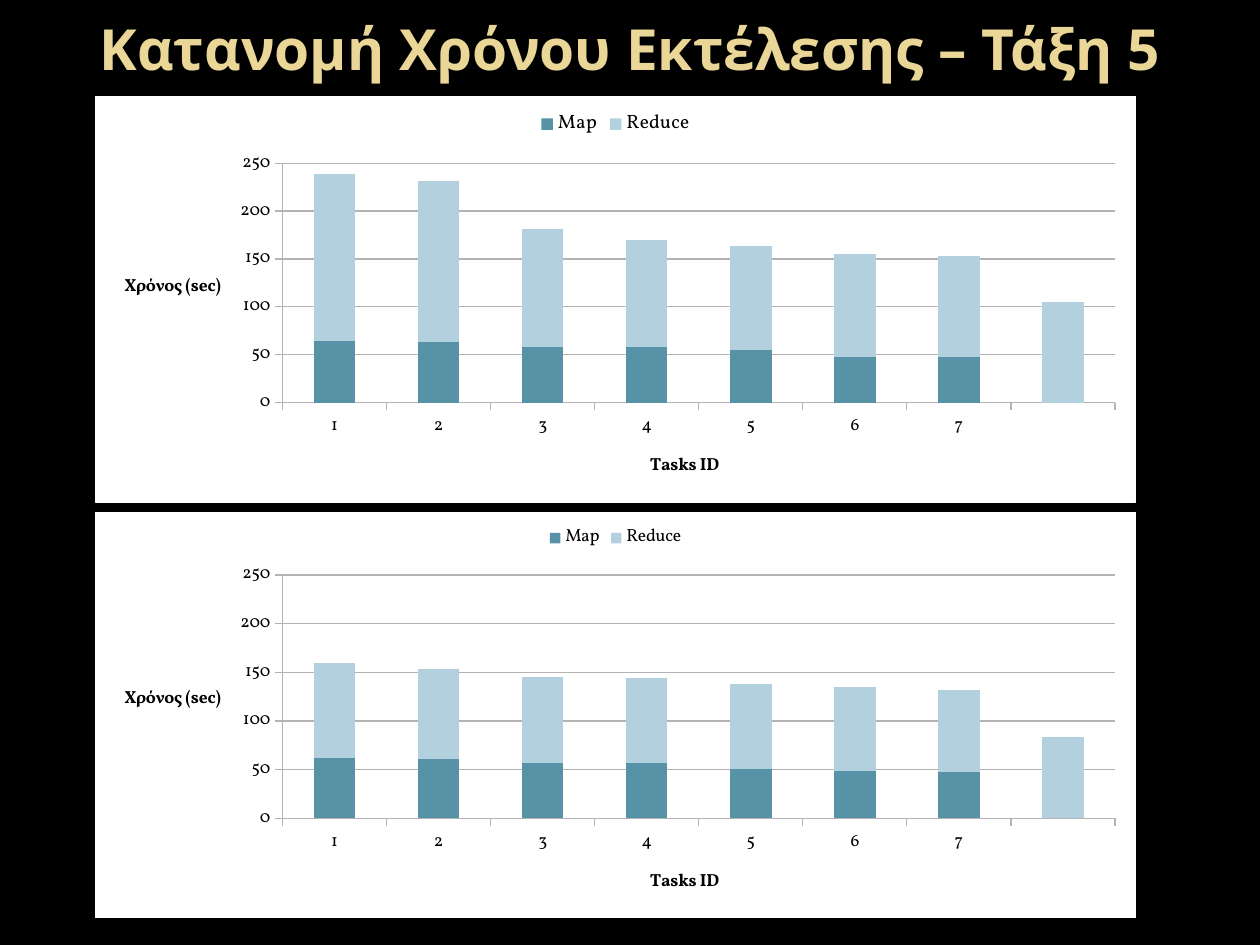
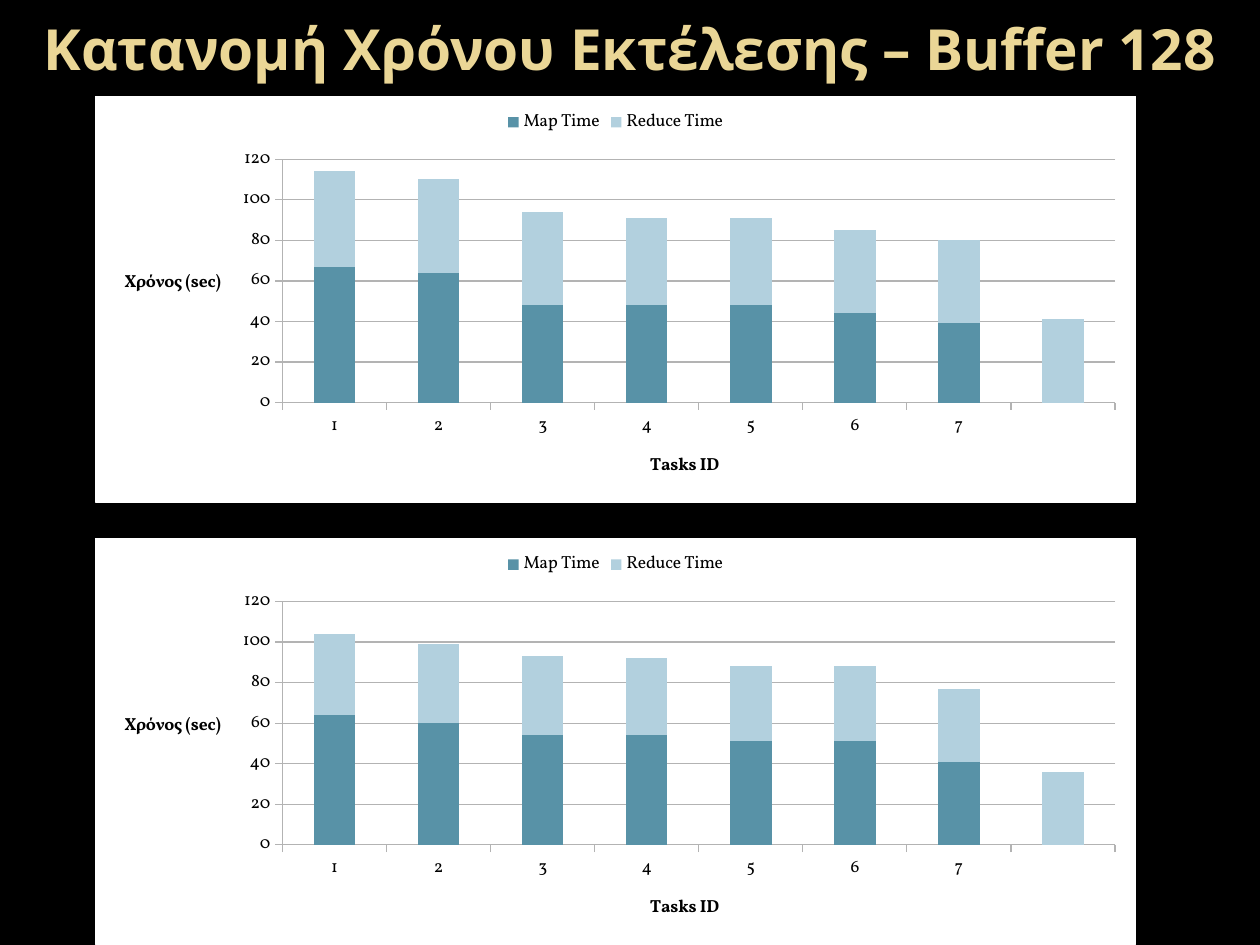
import pptx
import pptx.util
import pptx.dml.color
import pptx.chart.data
import pptx.enum.chart
import pptx.enum.text
import pptx.oxml
import pptx.oxml.ns

Inches, Pt = pptx.util.Inches, pptx.util.Pt
qn = pptx.oxml.ns.qn

BLACK, WHITE, GOLD, GRID = "000000", "FFFFFF", "EAD696", "B3B3B3"
SERIES_COLORS = ["5892A7", "B2D0DE"]
TITLE_HEIGHT = 0.76
CHART_LEFT, CHART_WIDTH, CHART_HEIGHT = 0.75, 8.27, 3.23
TASKS = ["1", "2", "3", "4", "5", "6", "7", ""]

# Each chart: top, legend size, plot top and height as shares, map and reduce times
SLIDES = [
    {"title": "Κατανομή Χρόνου Εκτέλεσης – Τάξη 5", "margin": 0.5,
     "names": ["Map", "Reduce"], "maximum": 250, "step": 50, "plot_left": 0.18,
     "charts": [
         (0.76, 11, 0.165, 0.59, [64, 63, 58, 58, 55, 48, 48, None],
          [175, 168, 123, 112, 109, 107, 105, 105]),
         (4.06, 10, 0.155, 0.6, [62, 61, 57, 57, 51, 49, 48, None],
          [98, 92, 88, 87, 87, 86, 84, 84])]},
    {"title": "Κατανομή Χρόνου Εκτέλεσης – Buffer 128", "margin": 0,
     "names": ["Map Time", "Reduce Time"], "maximum": 120, "step": 20, "plot_left": 0.18,
     "charts": [
         (0.76, 10, 0.155, 0.6, [67, 64, 48, 48, 48, 44, 39, None],
          [47, 46, 46, 43, 43, 41, 41, 41]),
         (4.27, 10, 0.155, 0.6, [64, 60, 54, 54, 51, 51, 41, None],
          [40, 39, 39, 38, 37, 37, 36, 36])]},
]


def color(value):
    return pptx.dml.color.RGBColor.from_string(value)


def place(element, index, inner=False, **shares):
    """Fix the place of a chart part, in shares of the chart's size."""
    for old in element.findall(qn("c:layout")):
        element.remove(old)
    target = '<c:layoutTarget val="inner"/>' if inner else ""
    modes = "".join(f'<c:{key}Mode val="edge"/>' for key in "xy")
    values = "".join(f'<c:{key} val="{share}"/>' for key, share in shares.items())
    element.insert(index, pptx.oxml.parse_xml(
        f'<c:layout {pptx.oxml.ns.nsdecls("c")}><c:manualLayout>'
        f'{target}{modes}{values}</c:manualLayout></c:layout>'))


presentation = pptx.Presentation()
presentation.slide_width, presentation.slide_height = Inches(10), Inches(7.5)

# Shared black background
background = presentation.slide_master.background.fill
background.solid()
background.fore_color.rgb = color(BLACK)

for content in SLIDES:
    slide = presentation.slides.add_slide(presentation.slide_layouts[6])

    # Title
    margin = content["margin"]
    title = slide.shapes.add_textbox(
        Inches(margin), 0, Inches(10 - 2 * margin), Inches(TITLE_HEIGHT))
    title.text_frame.word_wrap = True
    title.text_frame.vertical_anchor = pptx.enum.text.MSO_ANCHOR.MIDDLE
    paragraph = title.text_frame.paragraphs[0]
    paragraph.alignment = pptx.enum.text.PP_ALIGN.CENTER
    run = paragraph.add_run()
    run.text = content["title"]
    run.font.name, run.font.size, run.font.bold = "Open Sans", Pt(32.4), True
    run.font.color.rgb = color(GOLD)

    for top, legend_size, plot_top, plot_height, *times in content["charts"]:
        # Stacked columns
        data = pptx.chart.data.CategoryChartData()
        data.categories = TASKS
        for name, values in zip(content["names"], times):
            data.add_series(name, values)
        chart = slide.shapes.add_chart(
            pptx.enum.chart.XL_CHART_TYPE.COLUMN_STACKED, Inches(CHART_LEFT),
            Inches(top), Inches(CHART_WIDTH), Inches(CHART_HEIGHT), data).chart
        chart.has_title = False
        chart.font.name, chart.font.size = "Vollkorn", Pt(10)
        chart.font.color.rgb = color(BLACK)
        plot = chart.plots[0]
        plot.vary_by_categories = False
        plot.gap_width, plot.overlap = 150, 100
        for series, fill_color in zip(plot.series, SERIES_COLORS):
            series.format.fill.solid()
            series.format.fill.fore_color.rgb = color(fill_color)

        # Legend
        chart.has_legend = True
        chart.legend.position = pptx.enum.chart.XL_LEGEND_POSITION.TOP
        chart.legend.include_in_layout = False
        chart.legend.font.name, chart.legend.font.size = "Vollkorn", Pt(legend_size)
        chart.legend.font.color.rgb = color(BLACK)

        # Axes and their titles
        chart.value_axis.minimum_scale = 0
        chart.value_axis.maximum_scale = content["maximum"]
        chart.value_axis.major_unit = content["step"]
        chart.value_axis.has_major_gridlines = True
        chart.value_axis.major_gridlines.format.line.color.rgb = color(GRID)
        middle = round(plot_top + plot_height / 2 - 0.03, 2)
        for axis, label, x, y in [(chart.category_axis, "Tasks ID", 0.53, 0.87),
                                  (chart.value_axis, "Χρόνος (sec)", 0.025, middle)]:
            axis.major_tick_mark = pptx.enum.chart.XL_TICK_MARK.OUTSIDE
            axis.format.line.color.rgb = color(GRID)
            frame = axis.axis_title.text_frame
            frame._txBody.bodyPr.set("rot", "0")
            frame._txBody.bodyPr.set("vert", "horz")
            run = frame.paragraphs[0].add_run()
            run.text = label
            run.font.name, run.font.size, run.font.bold = "Vollkorn", Pt(10), True
            run.font.color.rgb = color(BLACK)
            place(axis.axis_title._element, 1, x=x, y=y)

        # Plot area and white panel
        chart_space = chart._chartSpace
        place(chart_space.chart.plotArea, 0, inner=True, x=content["plot_left"],
              y=plot_top, w=0.8, h=plot_height)
        solid = f'<a:solidFill><a:srgbClr val="{WHITE}"/></a:solidFill>'
        chart_space.chart.addnext(pptx.oxml.parse_xml(
            f'<c:spPr {pptx.oxml.ns.nsdecls("c", "a")}>{solid}'
            f'<a:ln w="9525">{solid}</a:ln></c:spPr>'))

presentation.save("out.pptx")
